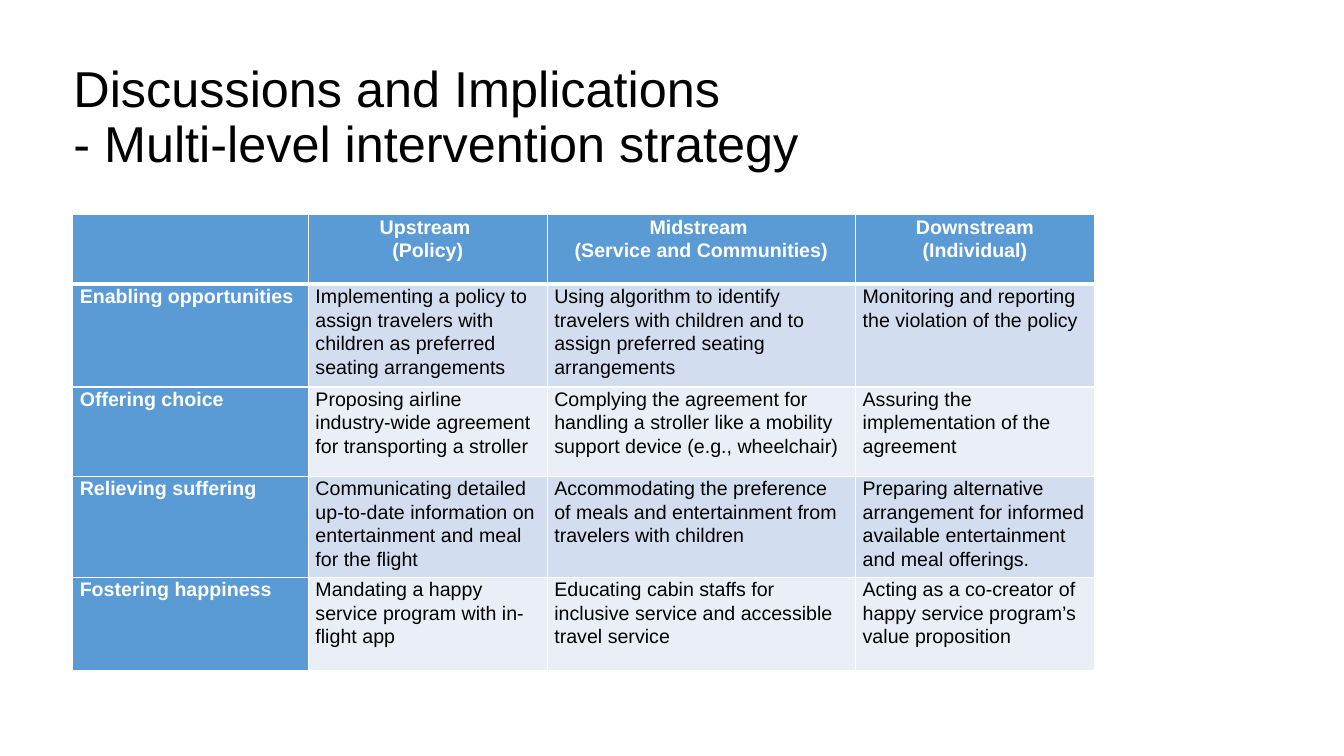
"""Build the slide on a multi-level intervention strategy."""
from lxml.etree import SubElement
from pptx import Presentation
from pptx.dml.color import RGBColor
from pptx.enum.text import MSO_ANCHOR as ANCHOR, PP_ALIGN as ALIGN
from pptx.oxml.ns import qn
from pptx.util import Cm, Pt

TITLE = "Discussions and Implications\v- Multi-level intervention strategy"
ROWS = [
    ["", "Upstream \n(Policy)", "Midstream \n(Service and Communities)", "Downstream\n(Individual)"],
    ["Enabling opportunities",
     "Implementing a policy to assign travelers with children as preferred seating arrangements",
     "Using algorithm to identify travelers with children and to assign preferred seating arrangements",
     "Monitoring and reporting the violation of the policy"],
    ["Offering choice",
     "Proposing airline industry-wide agreement for transporting a stroller",
     "Complying the agreement for handling a stroller like a mobility support device (e.g., wheelchair)",
     "Assuring the implementation of the agreement"],
    ["Relieving suffering",
     "Communicating detailed up-to-date information on entertainment and meal for the flight",
     "Accommodating the preference of meals and entertainment from travelers with children",
     "Preparing alternative arrangement for informed available entertainment and meal offerings."],
    ["Fostering happiness",
     "Mandating a happy service program with in-flight app",
     "Educating cabin staffs for inclusive service and accessible travel service",
     "Acting as a co-creator of happy service program’s value proposition"],
]
COL_WIDTHS = [5.94, 6.02, 7.77, 6.02]
ROW_HEIGHTS = [1.75, 2.59, 2.26, 2.39, 2.34]

BLACK = RGBColor(0x00, 0x00, 0x00)
WHITE = RGBColor(0xFF, 0xFF, 0xFF)
BLUE = RGBColor(0x5B, 0x9B, 0xD5)
BANDS = [RGBColor(0xEA, 0xEF, 0xF7), RGBColor(0xD2, 0xDE, 0xEF)]


def write(tf, text, size, color=BLACK, bold=False, align=ALIGN.LEFT, spacing=1.07):
    for i, line in enumerate(text.split("\n")):
        p = tf.add_paragraph() if i else tf.paragraphs[0]
        p.text = line
        p.alignment = align
        p.line_spacing = spacing
        for r in p.runs:
            r.font.name = "Arial"
            r.font.size = Pt(size)
            r.font.bold = bold
            r.font.color.rgb = color


def set_borders(cell, **widths):
    tc_pr = cell._tc.get_or_add_tcPr()
    for side in "LRTB":
        ln = SubElement(tc_pr, qn(f"a:ln{side}"), w=str(Pt(widths.get(side, 1))))
        fill = SubElement(ln, qn("a:solidFill"))
        SubElement(fill, qn("a:srgbClr"), val=str(WHITE))


def add_title(s):
    tf = s.shapes.add_textbox(Cm(1.6), Cm(1.5), Cm(30.63), Cm(2.54)).text_frame
    tf.word_wrap = True
    tf.vertical_anchor = ANCHOR.TOP
    write(tf, TITLE, 36, spacing=0.9)


def add_strategy_table(s):
    frame = s.shapes.add_table(len(ROWS), len(COL_WIDTHS), Cm(1.83), Cm(5.41),
                               Cm(sum(COL_WIDTHS)), Cm(sum(ROW_HEIGHTS)))
    table = frame.table
    for col, width in zip(table.columns, COL_WIDTHS):
        col.width = Cm(width)
    for row, height in zip(table.rows, ROW_HEIGHTS):
        row.height = Cm(height)
    for i, texts in enumerate(ROWS):
        for j, text in enumerate(texts):
            cell = table.cell(i, j)
            heading = i == 0 or j == 0
            cell.margin_left = cell.margin_right = Cm(0.18)
            cell.margin_top = cell.margin_bottom = 0
            set_borders(cell, B=3 if i == 0 else 1, T=3 if i == 1 else 1)
            cell.fill.solid()
            cell.fill.fore_color.rgb = BLUE if heading else BANDS[i % 2]
            write(cell.text_frame, text, 14, WHITE if heading else BLACK, heading,
                  ALIGN.CENTER if i == 0 else ALIGN.LEFT)


def main():
    prs = Presentation()
    prs.slide_width, prs.slide_height = Cm(33.87), Cm(19.05)
    s = prs.slides.add_slide(prs.slide_layouts[6])
    add_title(s)
    add_strategy_table(s)
    prs.save("out.pptx")


if __name__ == "__main__":
    main()
